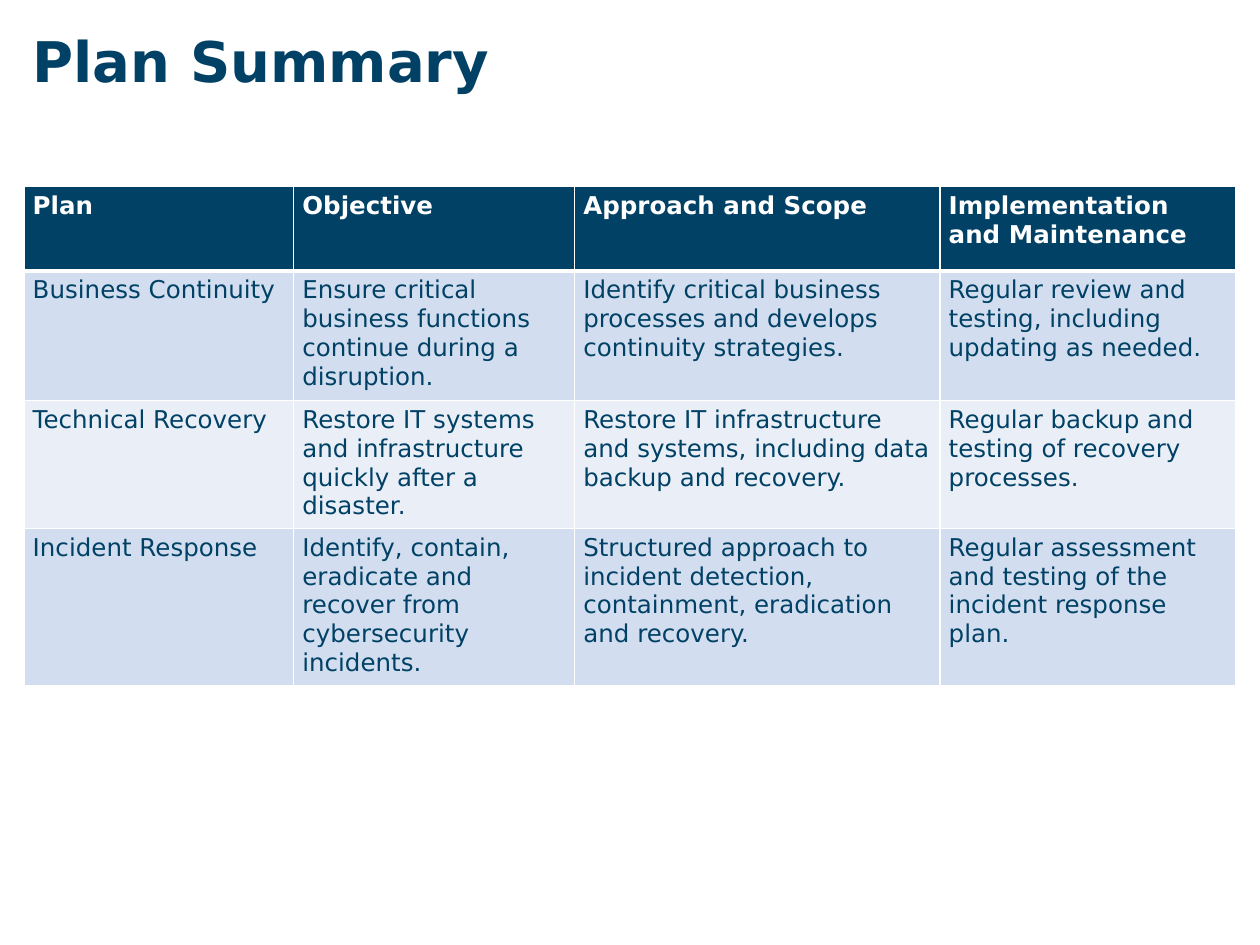
from dataclasses import dataclass

from lxml import etree
from pptx import Presentation
from pptx import util as u
from pptx.dml.color import RGBColor
from pptx.enum import text
from pptx.oxml.ns import qn


@dataclass(frozen=True)
class Theme:
    face: str = "DejaVu Sans"
    navy: str = "004165"
    white: str = "FFFFFF"
    bands: tuple = ("D2DEEF", "EAEFF7")
    title: float = 32
    body: float = 14
    thin: float = 0.75
    thick: float = 2.25


class Deck:
    """Hold the theme and the current slide, and add its elements."""

    def __init__(self, theme, slide):
        self.theme = theme
        self.slide = slide

    def style(self, para, size, color, bold):
        font = para.font
        font.name = self.theme.face
        font.size = u.Pt(size)
        font.bold = bold
        font.color.rgb = RGBColor.from_string(color)

    def inset(self, item):
        item.margin_left = item.margin_right = u.Inches(0.07)
        item.margin_top = item.margin_bottom = u.Inches(0.04)
        item.vertical_anchor = text.MSO_ANCHOR.TOP

    def title(self, words, box):
        frame = self.slide.shapes.add_textbox(*map(u.Inches, box)).text_frame
        frame.word_wrap = True
        self.inset(frame)
        para = frame.paragraphs[0]
        para.text = words
        para.line_spacing = 0.9
        self.style(para, self.theme.title, self.theme.navy, True)

    def border(self, cell, side, width):
        props = cell._tc.get_or_add_tcPr()
        line = etree.SubElement(props, qn(f"a:ln{side}"), w=str(u.Pt(width)))
        fill = etree.SubElement(line, qn("a:solidFill"))
        etree.SubElement(fill, qn("a:srgbClr"), val=self.theme.white)

    def cell(self, cell, words, row):
        theme = self.theme
        head = row == 0
        cell.text = words
        self.inset(cell)
        color = theme.white if head else theme.navy
        self.style(cell.text_frame.paragraphs[0], theme.body, color, head)
        heavy = {0: "B", 1: "T"}.get(row)
        for side in "LRTB":
            self.border(cell, side, theme.thick if side == heavy else theme.thin)
        back = theme.navy if head else theme.bands[(row - 1) % 2]
        cell.fill.solid()
        cell.fill.fore_color.rgb = RGBColor.from_string(back)

    def table(self, rows, left, top, widths, heights):
        box = map(u.Inches, (left, top, sum(widths), sum(heights)))
        grid = self.slide.shapes.add_table(len(rows), len(widths), *box).table
        for col, width in zip(grid.columns, widths):
            col.width = u.Inches(width)
        for line, height in zip(grid.rows, heights):
            line.height = u.Inches(height)
        for r, row in enumerate(rows):
            for c, words in enumerate(row):
                self.cell(grid.cell(r, c), words, r)


PLANS = [
    ("Plan", "Objective", "Approach and Scope", "Implementation and Maintenance"),
    (
        "Business Continuity",
        "Ensure critical business functions continue during a disruption.",
        "Identify critical business processes and develops continuity strategies.",
        "Regular review and testing, including updating as needed.",
    ),
    (
        "Technical Recovery",
        "Restore IT systems and infrastructure quickly after a disaster.",
        "Restore IT infrastructure and systems, including data backup and recovery.",
        "Regular backup and testing of recovery processes.",
    ),
    (
        "Incident Response",
        "Identify, contain, eradicate and recover from cybersecurity incidents.",
        "Structured approach to incident detection, containment, eradication and recovery.",
        "Regular assessment and testing of the incident response plan.",
    ),
]


def main():
    show = Presentation()
    show.slide_width, show.slide_height = u.Inches(10), u.Inches(7.5)
    deck = Deck(Theme(), show.slides.add_slide(show.slide_layouts[6]))
    deck.title("Plan Summary", (0.19, 0.23, 6.69, 1.19))
    deck.table(PLANS, 0.19, 1.48, (2.14, 2.23, 2.9, 2.35), (0.67, 1.03, 0.97, 1.03))
    show.save("out.pptx")


if __name__ == "__main__":
    main()
